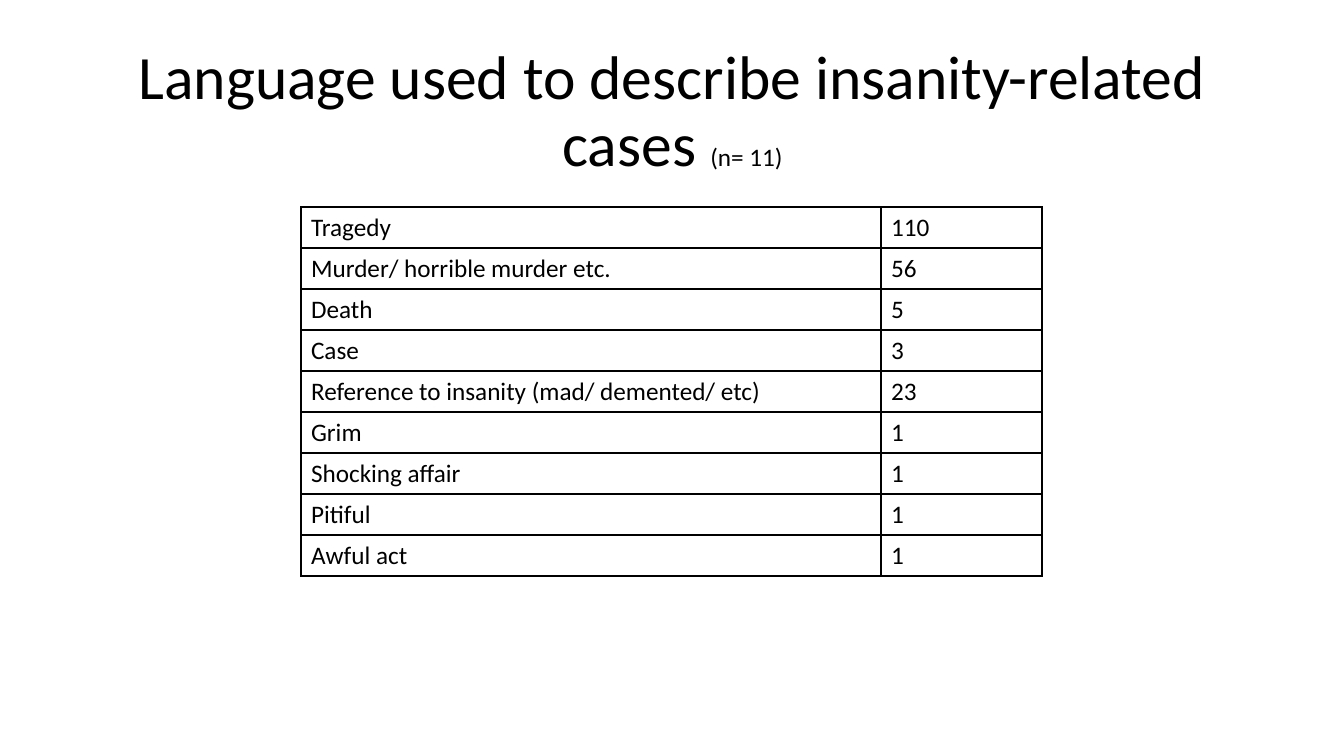
import pptx
import pptx.dml.color
import pptx.enum.text
import pptx.oxml
import pptx.oxml.ns
import pptx.util

EMU_PER_PX = 914400 / 100.8
COLOURS = {"ink": "000000", "paper": "FFFFFF"}

TERMS = [
    ("Tragedy", 110),
    ("Murder/ horrible murder etc.", 56),
    ("Death", 5),
    ("Case", 3),
    ("Reference to insanity (mad/ demented/ etc)", 23),
    ("Grim", 1),
    ("Shocking affair", 1),
    ("Pitiful", 1),
    ("Awful act", 1),
]


def px(length):
    return pptx.util.Emu(round(length * EMU_PER_PX))


def colour(name):
    return pptx.dml.color.RGBColor.from_string(COLOURS[name])


class SlideBuilder:
    """Holds the text style and the slide being built."""

    font_name = "Calibri"

    def __init__(self, presentation):
        self.slide = presentation.slides.add_slide(presentation.slide_layouts[6])
        background = self.slide.background.fill
        background.solid()
        background.fore_color.rgb = colour("paper")

    def style(self, run, size):
        run.font.name = self.font_name
        run.font.size = pptx.util.Pt(size)
        run.font.color.rgb = colour("ink")

    def title(self, left, top, width, height, parts):
        box = self.slide.shapes.add_textbox(px(left), px(top), px(width), px(height))
        text_frame = box.text_frame
        text_frame.word_wrap = True
        text_frame.vertical_anchor = pptx.enum.text.MSO_ANCHOR.MIDDLE
        paragraph = text_frame.paragraphs[0]
        paragraph.alignment = pptx.enum.text.PP_ALIGN.CENTER
        paragraph.line_spacing = 0.9
        for text, size in parts:
            run = paragraph.add_run()
            run.text = text
            self.style(run, size)

    def border(self, cell):
        properties = cell._tc.get_or_add_tcPr()
        for position, side in enumerate(("lnL", "lnR", "lnT", "lnB")):
            line = pptx.oxml.parse_xml(
                f'<a:{side} {pptx.oxml.ns.nsdecls("a")} w="{pptx.util.Pt(1)}">'
                f'<a:solidFill><a:srgbClr val="{COLOURS["ink"]}"/></a:solidFill>'
                f'</a:{side}>'
            )
            properties.insert(position, line)

    def table(self, left, top, column_widths, row_height, rows, size):
        frame = self.slide.shapes.add_table(
            len(rows), len(column_widths), px(left), px(top),
            px(sum(column_widths)), px(row_height * len(rows)))
        table = frame.table
        table.first_row = False
        table.horz_banding = False
        for column, width in zip(table.columns, column_widths):
            column.width = px(width)
        for row, values in zip(table.rows, rows):
            row.height = px(row_height)
            for cell, value in zip(row.cells, values):
                cell.text_frame.text = str(value)
                self.style(cell.text_frame.paragraphs[0].runs[0], size)
                cell.fill.background()
                self.border(cell)


def main():
    presentation = pptx.Presentation()
    presentation.slide_width = px(1344)
    presentation.slide_height = px(756)
    builder = SlideBuilder(presentation)

    # Title with the sample size in smaller type
    builder.title(93, 40, 1159, 146, [
        ("Language used to describe insanity-related cases ", 44),
        ("(n= 11)", 18),
    ])

    # Terms and how often each was used
    builder.table(301, 207, (580, 161), 41, TERMS, 18)

    presentation.save("out.pptx")


if __name__ == "__main__":
    main()
